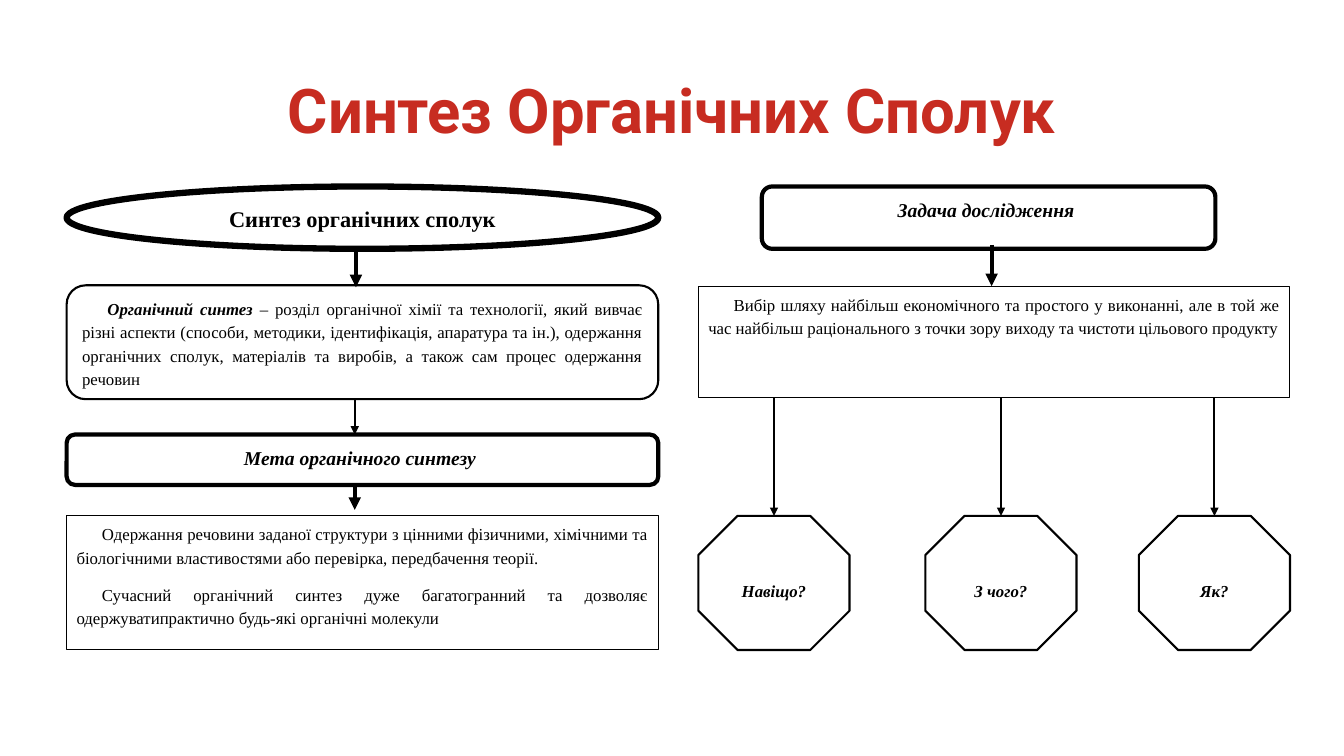
from dataclasses import dataclass

from lxml import etree
from pptx import Presentation
from pptx.dml.color import RGBColor
from pptx.enum.shapes import MSO_CONNECTOR, MSO_SHAPE
from pptx.enum.text import MSO_ANCHOR, PP_ALIGN
from pptx.oxml.ns import qn
from pptx.util import Cm, Pt

OVAL, RECT = MSO_SHAPE.OVAL, MSO_SHAPE.RECTANGLE
ROUND, OCTAGON = MSO_SHAPE.ROUNDED_RECTANGLE, MSO_SHAPE.OCTAGON
CENTER, JUSTIFY = PP_ALIGN.CENTER, PP_ALIGN.JUSTIFY
TOP, MIDDLE = MSO_ANCHOR.TOP, MSO_ANCHOR.MIDDLE
STRAIGHT = MSO_CONNECTOR.STRAIGHT

COLORS = {"title": "C72C21", "ink": "000000", "paper": "FFFFFF"}
BODY_FONT = "Times New Roman"
LEFT_X, RIGHT_X, COLUMN_W = 1.68, 17.6, 14.91
TOP_ROW, BOTTOM_ROW, BOTTOM_H = 4.7, 13.0, 3.38
OCTAGON_W = 3.81


@dataclass
class Run:
    text: str
    size: float = 12
    bold: bool = False
    italic: bool = False
    font: str = BODY_FONT
    color: str = "ink"


@dataclass
class Box:
    kind: int
    x: float
    y: float
    w: float
    h: float
    line: float
    paragraphs: list[list[Run]]
    align: int = CENTER
    inset_top: float = 0.13


@dataclass
class Arrow:
    x: float
    y1: float
    y2: float
    width: float


def rgb(name: str) -> RGBColor:
    return RGBColor.from_string(COLORS[name])


def set_attrs(target, values: dict) -> None:
    for name, value in values.items():
        setattr(target, name, value)


def add_runs(p, runs: list[Run]) -> None:
    for run in runs:
        r = p.add_run()
        r.text = run.text
        set_attrs(r.font, {"name": run.font, "size": Pt(run.size),
                           "bold": run.bold, "italic": run.italic})
        r.font.color.rgb = rgb(run.color)


def draw_title(slide, text: str) -> None:
    tf = slide.shapes.add_textbox(Cm(2.34), Cm(1.02), Cm(29.21), Cm(3.68)).text_frame
    set_attrs(tf, {"word_wrap": True, "vertical_anchor": MIDDLE})
    p = tf.paragraphs[0]
    set_attrs(p, {"alignment": CENTER, "line_spacing": 0.9})
    add_runs(p, [Run(text, 44, True, font="Roboto", color="title")])


def draw_box(slide, box: Box) -> None:
    sp = slide.shapes.add_shape(box.kind, Cm(box.x), Cm(box.y), Cm(box.w), Cm(box.h))
    sp.shadow.inherit = False
    sp.fill.solid()
    sp.fill.fore_color.rgb = rgb("paper")
    sp.line.color.rgb = rgb("ink")
    sp.line.width = Pt(box.line)
    tf = sp.text_frame
    set_attrs(tf, {"word_wrap": True, "vertical_anchor": TOP,
                   "margin_top": Cm(box.inset_top)})
    for i, runs in enumerate(box.paragraphs):
        p = tf.add_paragraph() if i else tf.paragraphs[0]
        set_attrs(p, {"alignment": box.align, "line_spacing": 1.15,
                      "space_after": Pt(10)})
        if box.align == JUSTIFY:
            pPr = p._p.get_or_add_pPr()
            pPr.set("marL", "0")
            pPr.set("indent", str(Cm(0.64)))
        add_runs(p, runs)


def draw_arrow(slide, arrow: Arrow) -> None:
    x = Cm(arrow.x)
    c = slide.shapes.add_connector(STRAIGHT, x, Cm(arrow.y1), x, Cm(arrow.y2))
    c.line.color.rgb = rgb("ink")
    c.line.width = Pt(arrow.width)
    etree.SubElement(c.line._get_or_add_ln(), qn("a:tailEnd"), type="triangle")
    etree.SubElement(c._element.spPr, qn("a:effectLst"))


def heading(text: str, size: float = 14, italic: bool = True) -> list[list[Run]]:
    return [[Run(text, size, True, italic)]]


BOXES = [
    # Left column: definition and aim
    Box(OVAL, LEFT_X, TOP_ROW, COLUMN_W, 1.57, 4.5,
        heading("Синтез органічних сполук", 16, False)),
    Box(ROUND, LEFT_X, 7.19, COLUMN_W, 2.87, 1.5, [[
        Run("Органічний синтез", bold=True, italic=True),
        Run(" – розділ органічної хімії та технології, який вивчає різні аспекти "
            "(способи, методики, ідентифікація, апаратура та ін.), одержання "
            "органічних сполук, матеріалів та виробів, а також сам процес "
            "одержання речовин")]], JUSTIFY),
    Box(ROUND, LEFT_X, 10.95, COLUMN_W, 1.27, 3, heading("Мета органічного синтезу ")),
    Box(RECT, LEFT_X, BOTTOM_ROW, COLUMN_W, BOTTOM_H, 0.75, [
        [Run("Одержання речовини заданої структури з цінними фізичними, хімічними "
             "та біологічними властивостями або перевірка, передбачення теорії.")],
        [Run("Сучасний органічний синтез дуже багатогранний та дозволяє "
             "одержуватипрактично будь-які органічні молекули")]], JUSTIFY),
    # Right column: research task
    Box(ROUND, 19.2, TOP_ROW, 11.43, 1.57, 3, heading("Задача дослідження ")),
    Box(RECT, RIGHT_X, 7.21, COLUMN_W, 2.82, 0.75, [[
        Run("Вибір шляху найбільш економічного та простого у виконанні, але в той "
            "же час найбільш раціонального з точки зору виходу та чистоти "
            "цільового продукту")]], JUSTIFY),
]

ARROWS = [
    Arrow(8.97, 6.27, 7.24, 3),
    Arrow(8.94, 10.03, 10.95, 1.5),
    Arrow(8.94, 12.22, 12.85, 3),
    Arrow(24.99, 6.17, 7.21, 3),
]

QUESTIONS = {"Навіщо?": RIGHT_X, "З чого?": 23.32, "Як?": 28.7}


def main() -> None:
    prs = Presentation()
    prs.slide_width, prs.slide_height = Cm(33.87), Cm(19.05)
    slide = prs.slides.add_slide(prs.slide_layouts[6])
    draw_title(slide, "Синтез Органічних Сполук")
    for box in BOXES:
        draw_box(slide, box)
    for arrow in ARROWS:
        draw_arrow(slide, arrow)
    # Questions, each with an arrow from the task above
    for text, x in QUESTIONS.items():
        draw_box(slide, Box(OCTAGON, x, BOTTOM_ROW, OCTAGON_W, BOTTOM_H, 1.5,
                            heading(text, 12), inset_top=1.06))
        draw_arrow(slide, Arrow(x + OCTAGON_W / 2, 10.03, BOTTOM_ROW, 1.5))
    prs.save("out.pptx")


if __name__ == "__main__":
    main()
